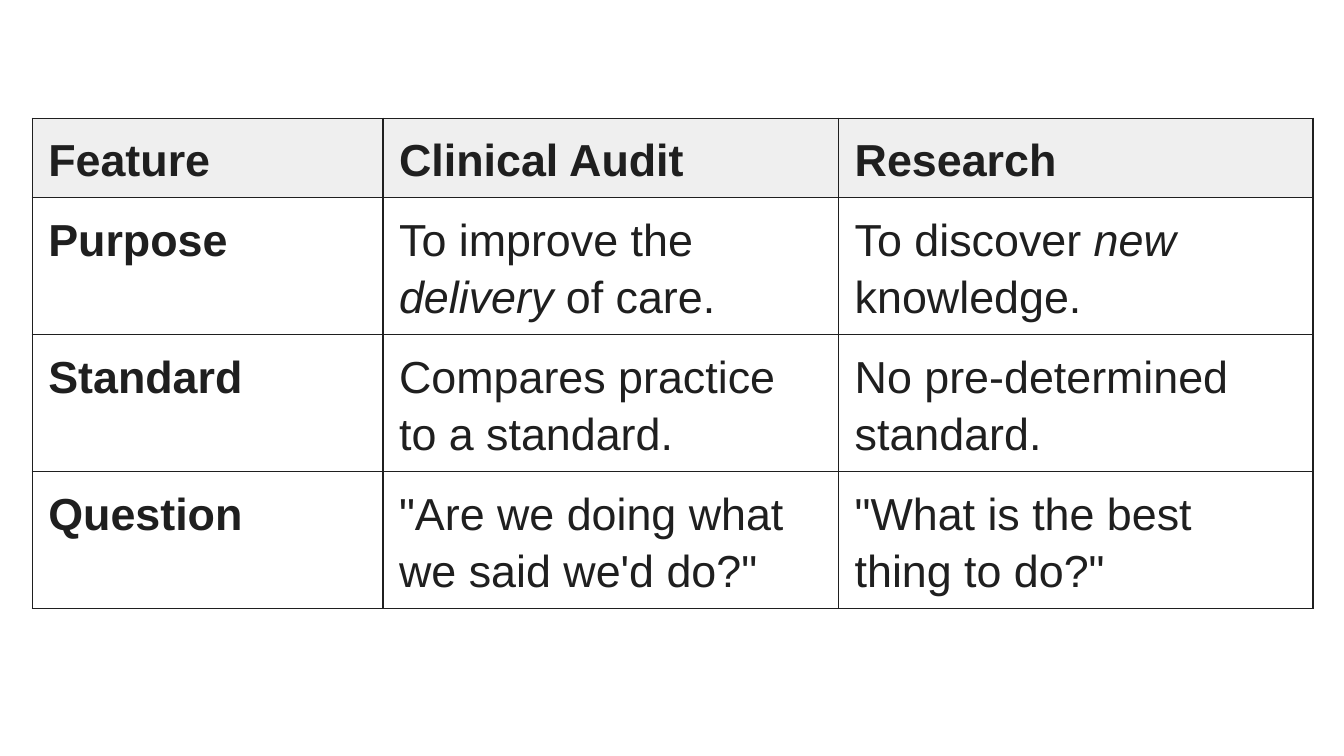
"""Build a slide with a table comparing clinical audit and research."""
from lxml import etree
from pptx import Presentation, util as u
from pptx.dml.color import RGBColor
from pptx.oxml.ns import qn

ROWS = [
    ("Feature", "Clinical Audit", "Research"),
    ("Purpose", "To improve the *delivery* of care.", "To discover *new* knowledge."),
    ("Standard", "Compares practice to a standard.", "No pre-determined standard."),
    ("Question", "\"Are we doing what we said we'd do?\"", "\"What is the best thing to do?\""),
]
WIDTH = u.Inches(10)
HEIGHT = WIDTH * 9 // 16
COLS = [2.61, 3.39, 3.53]
HEIGHTS = [0.59] + [1.02] * 3
LEFT, TOP = 0.24, 0.88
INK = RGBColor(0x1F, 0x1F, 0x1F)
HEADER = RGBColor(0xEF, 0xEF, 0xEF)


def add_borders(cell):
    """Draw a thin line on each side of the cell."""
    tc_pr = cell._tc.get_or_add_tcPr()
    for i, side in enumerate(("lnL", "lnR", "lnT", "lnB")):
        ln = etree.Element(qn(f"a:{side}"), w=str(u.Pt(0.75)))
        fill = etree.SubElement(ln, qn("a:solidFill"))
        etree.SubElement(fill, qn("a:srgbClr"), val=str(INK))
        tc_pr.insert(i, ln)


def write(cell, words, bold):
    """Write the words, with parts between asterisks in italics."""
    p = cell.text_frame.paragraphs[0]
    p.line_spacing = 1.15
    for i, part in enumerate(words.split("*")):
        r = p.add_run()
        r.text = part
        r.font.name, r.font.size = "Arial", u.Pt(24)
        r.font.bold, r.font.italic = bold, i % 2 == 1
        r.font.color.rgb = INK


def main():
    """Lay out the table and save the slide."""
    prs = Presentation()
    prs.slide_width, prs.slide_height = WIDTH, HEIGHT
    s = prs.slides.add_slide(prs.slide_layouts[6])
    size = [u.Inches(v) for v in (LEFT, TOP, sum(COLS), sum(HEIGHTS))]
    table = s.shapes.add_table(len(ROWS), len(COLS), *size).table
    table.first_row = table.horz_banding = False
    for col, width in zip(table.columns, COLS):
        col.width = u.Inches(width)
    for i, (row, height) in enumerate(zip(table.rows, HEIGHTS)):
        row.height = u.Inches(height)
        for j, cell in enumerate(row.cells):
            cell.margin_left = cell.margin_right = u.Inches(0.12)
            cell.margin_top = cell.margin_bottom = u.Inches(0.08)
            if i == 0:
                cell.fill.solid()
                cell.fill.fore_color.rgb = HEADER
            else:
                cell.fill.background()
            add_borders(cell)
            write(cell, ROWS[i][j], bold=i == 0 or j == 0)
    prs.save("out.pptx")


if __name__ == "__main__":
    main()
